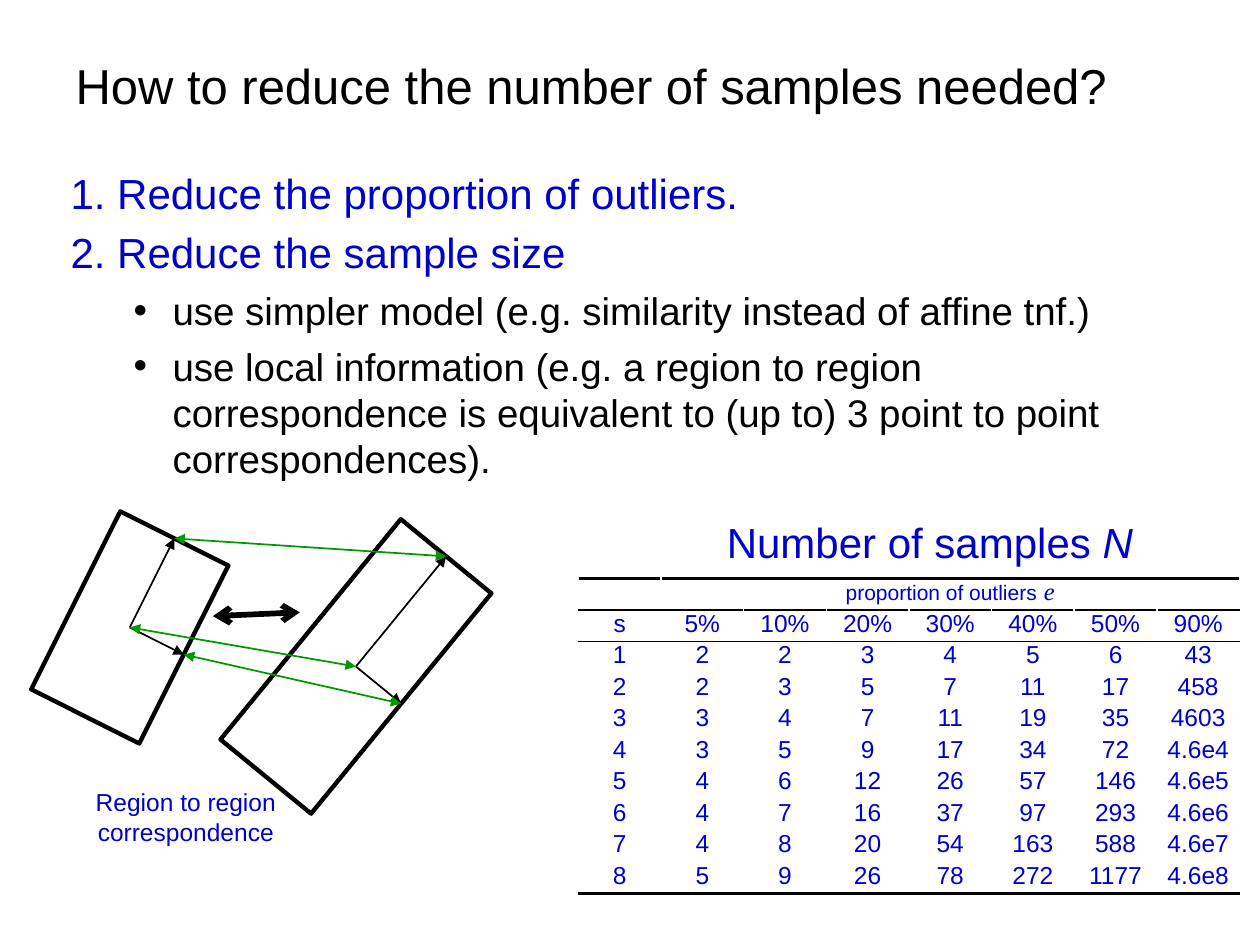
from dataclasses import dataclass
from math import cos, radians, sin

from lxml.etree import SubElement
from pptx import Presentation
from pptx.dml.color import RGBColor
from pptx.enum.shapes import MSO_CONNECTOR, MSO_SHAPE
from pptx.enum.text import MSO_ANCHOR, MSO_AUTO_SIZE, PP_ALIGN
from pptx.oxml.ns import qn
from pptx.util import Inches, Pt


@dataclass(frozen=True)
class Theme:
    """Colours, fonts and type sizes of the slide."""
    black: RGBColor = RGBColor(0, 0, 0)
    blue: RGBColor = RGBColor(0, 0, 0xCC)
    green: RGBColor = RGBColor(0, 0x99, 0)
    sans: str = "Arial"
    serif: str = "Times New Roman"
    title: int = 28
    heading: int = 24
    detail: int = 22
    label: int = 14
    small: int = 12


THEME = Theme()
COLUMNS, ROWS = 100, 75
CELL = Inches(10) / COLUMNS
TOP, RIGHT = 0, 3

POINTS = [
    (0, "1. Reduce the proportion of outliers."),
    (0, "2. Reduce the sample size"),
    (1, "use simpler model (e.g. similarity instead of affine tnf.)"),
    (1, "use local information (e.g. a region to region correspondence "
        "is equivalent to (up to) 3 point to point correspondences)."),
]
SAMPLE_COUNTS = """s 5% 10% 20% 30% 40% 50% 90%
1 2 2 3 4 5 6 43
2 2 3 5 7 11 17 458
3 3 4 7 11 19 35 4603
4 3 5 9 17 34 72 4.6e4
5 4 6 12 26 57 146 4.6e5
6 4 7 16 37 97 293 4.6e6
7 4 8 20 54 163 588 4.6e7
8 5 9 26 78 272 1177 4.6e8"""


@dataclass(frozen=True)
class Box:
    """A rectangle in grid columns and rows."""
    left: float
    top: float
    width: float
    height: float

    def inner(self, left, top, width, height):
        """Return a box placed relative to this one."""
        return Box(self.left + left, self.top + top, width, height)

    def emu(self):
        """Return the four lengths for python-pptx."""
        return [round(n * CELL) for n in (self.left, self.top, self.width, self.height)]


def style(font, size, color, name=THEME.sans):
    """Set the size, colour and face of a font."""
    font.size, font.name = Pt(size), name
    font.color.rgb = color


def place(shape, box):
    """Move a placeholder into a box."""
    shape.left, shape.top, shape.width, shape.height = box.emu()


def add_title(slide, box):
    """Fill the title placeholder."""
    title = slide.shapes.title
    place(title, box)
    frame = title.text_frame
    frame.text = "How to reduce the number of samples needed?"
    frame.vertical_anchor = MSO_ANCHOR.MIDDLE
    frame.auto_size = MSO_AUTO_SIZE.NONE
    frame.paragraphs[0].alignment = PP_ALIGN.LEFT
    style(frame.paragraphs[0].font, THEME.title, THEME.black)


def set_bullet(paragraph, level):
    """Set the indents and bullet of an outline level."""
    margin, hanging = ((0.38, 0.38), (0.81, 0.31))[level]
    properties = paragraph._p.get_or_add_pPr()
    properties.set("marL", str(Inches(margin)))
    properties.set("indent", str(-Inches(hanging)))
    if level:
        color = SubElement(properties, qn("a:buClr"))
        SubElement(color, qn("a:srgbClr"), val=str(THEME.black))
        SubElement(properties, qn("a:buFont"), typeface=THEME.sans)
        SubElement(properties, qn("a:buChar"), char="•")
    else:
        SubElement(properties, qn("a:buNone"))


def add_points(slide, box):
    """Fill the body placeholder with the two-level list."""
    body = slide.placeholders[1]
    place(body, box)
    frame = body.text_frame
    frame.auto_size = MSO_AUTO_SIZE.NONE
    for index, (level, wording) in enumerate(POINTS):
        point = frame.add_paragraph() if index else frame.paragraphs[0]
        point.text, point.level = wording, level
        set_bullet(point, level)
        point.space_before = Pt((5, 5.5)[level] if index else 0)
        size, color = ((THEME.heading, THEME.blue), (THEME.detail, THEME.black))[level]
        style(point.font, size, color)


def add_border(cell, side, width):
    """Draw one horizontal border of a table cell."""
    line = SubElement(cell._tc.get_or_add_tcPr(), qn("a:" + side), w=str(Pt(width)))
    fill = SubElement(line, qn("a:solidFill"))
    SubElement(fill, qn("a:srgbClr"), val=str(THEME.black))


def format_cell(cell, row, last):
    """Set margins, rules and type of a table cell."""
    cell.margin_left = cell.margin_right = Inches(0.05)
    cell.margin_top = cell.margin_bottom = 0
    if row <= 2:
        add_border(cell, "lnT", 1 if row else 2.25)
    if row <= 1 or row == last:
        add_border(cell, "lnB", 2.25 if row == last else 1)
    cell.fill.background()
    paragraph = cell.text_frame.paragraphs[0]
    paragraph.alignment = PP_ALIGN.CENTER
    paragraph.space_before = Pt(0)
    style(paragraph.font, THEME.label, THEME.blue)
    if not cell.text_frame.text:
        SubElement(paragraph._p, qn("a:endParaRPr"), sz=str(THEME.small * 100))


def add_sample_table(slide, box):
    """Add the heading and the table of sample counts."""
    heading = slide.shapes.add_textbox(*box.inner(10.8, 0, 34.6, 5).emu())
    heading.text_frame.word_wrap = False
    caption = heading.text_frame.paragraphs[0]
    caption.add_run().text = "Number of samples "
    symbol = caption.add_run()
    symbol.text, symbol.font.italic = "N", True
    style(caption.font, THEME.heading, THEME.blue)

    counts = [line.split() for line in SAMPLE_COUNTS.splitlines()]
    rows, columns = len(counts) + 1, len(counts[0])
    grid = box.inner(0, 5.4, box.width, box.height - 5.4)
    table = slide.shapes.add_table(rows, columns, *grid.emu()).table
    table.first_row = table.horz_banding = False
    for row, values in enumerate(counts, 1):
        for column, value in enumerate(values):
            table.cell(row, column).text = value
    outliers = table.cell(0, 1)
    outliers.merge(table.cell(0, columns - 1))
    words = outliers.text_frame.paragraphs[0]
    for wording, size, face in (("proportion of outliers", THEME.small, THEME.sans),
                                (" ", THEME.label, THEME.sans),
                                ("e", THEME.label, THEME.serif)):
        run = words.add_run()
        run.text, run.font.italic = wording, face == THEME.serif
        style(run.font, size, THEME.blue, face)
    for row in range(rows):
        for column in range(columns):
            format_cell(table.cell(row, column), row, rows - 1)


def add_region(slide, box, angle):
    """Add a turned rectangle; return its centre, top and right joints."""
    region = slide.shapes.add_shape(MSO_SHAPE.RECTANGLE, *box.emu())
    region.rotation = angle
    region.shadow.inherit = False
    region.fill.background()
    region.line.color.rgb, region.line.width = THEME.black, Pt(2.5)
    x, y = box.left + box.width / 2, box.top + box.height / 2
    across, along = cos(radians(angle)), sin(radians(angle))
    top = (x + box.height / 2 * along, y - box.height / 2 * across)
    right = (x + box.width / 2 * across, y + box.width / 2 * along)
    return (None, None, (x, y)), (region, TOP, top), (region, RIGHT, right)


def add_arrow(slide, start, end, color=THEME.black, width=1, kind="triangle", both=False):
    """Link two joints with an arrow, attached where they lie on a side."""
    points = [round(n * CELL) for n in (*start[2], *end[2])]
    arrow = slide.shapes.add_connector(MSO_CONNECTOR.STRAIGHT, *points)
    if start[0] is not None:
        arrow.begin_connect(*start[:2])
    if end[0] is not None:
        arrow.end_connect(*end[:2])
    arrow.begin_x, arrow.begin_y, arrow.end_x, arrow.end_y = points
    arrow.line.color.rgb, arrow.line.width = color, Pt(width)
    line = arrow.line._get_or_add_ln()
    for tip in ("headEnd", "tailEnd") if both else ("tailEnd",):
        SubElement(line, qn("a:" + tip), type=kind)
    SubElement(arrow._element.spPr, qn("a:effectLst"))


def add_correspondence(slide, box):
    """Draw two regions with their axes and matching points."""
    first = add_region(slide, box.inner(1, 0.3, 9.6, 15.8), 26.6)
    second = add_region(slide, box.inner(19.1, 0, 9.3, 22.6), 39.3)
    for centre, *sides in (first, second):
        for side in sides:
            add_arrow(slide, centre, side)
    for here, there in zip(first, second):
        add_arrow(slide, here, there, THEME.green, both=True)
    ends = [(None, None, (box.left + x, box.top + y)) for x, y in ((12.4, 7.3), (19.3, 7))]
    add_arrow(slide, *ends, width=3.25, kind="arrow", both=True)

    label = slide.shapes.add_textbox(*box.inner(0, 20.4, 20.5, 5.7).emu())
    label.text_frame.word_wrap = True
    caption = label.text_frame.paragraphs[0]
    caption.text, caption.alignment = "Region to region correspondence", PP_ALIGN.CENTER
    style(caption.font, THEME.label, THEME.blue)


def main():
    """Build and save the slide."""
    deck = Presentation()
    deck.slide_width, deck.slide_height = round(COLUMNS * CELL), round(ROWS * CELL)
    slide = deck.slides.add_slide(deck.slide_layouts[1])
    add_title(slide, Box(5, 1.7, 90, 10))
    add_points(slide, Box(4.6, 12.8, 90, 60.8))
    add_sample_table(slide, Box(45.9, 40.5, 52.5, 30.4))
    add_correspondence(slide, Box(4.5, 41.6, 34, 26.1))
    deck.save("out.pptx")


if __name__ == "__main__":
    main()
